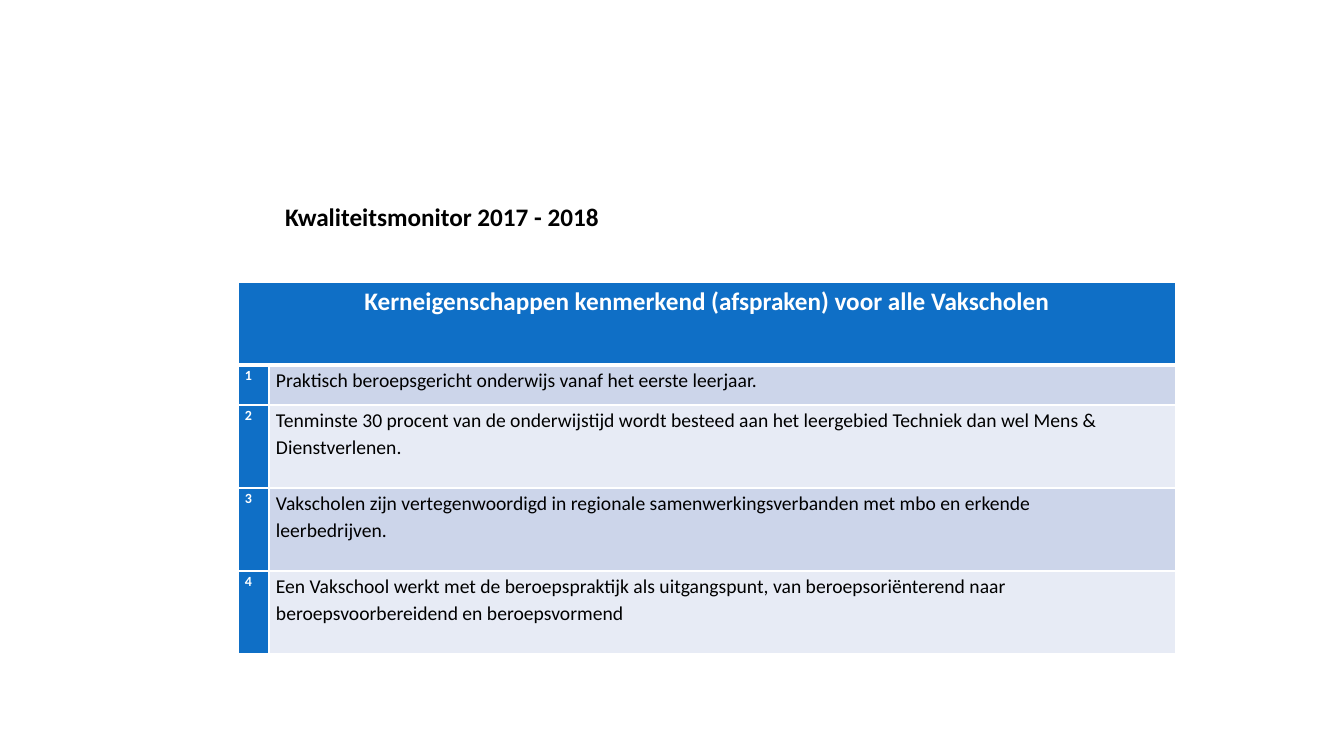
from lxml import etree
from pptx import Presentation
from pptx.dml.color import RGBColor
from pptx.enum.text import MSO_ANCHOR, PP_ALIGN
from pptx.oxml.ns import qn
from pptx.util import Pt

LEFT, CENTER = PP_ALIGN.LEFT, PP_ALIGN.CENTER
TOP, MIDDLE = MSO_ANCHOR.TOP, MSO_ANCHOR.MIDDLE

PX = 914400 / 100.8  # EMU in one px
WHITE = RGBColor(0xFF, 0xFF, 0xFF)
BLACK = RGBColor(0x00, 0x00, 0x00)
BLUE = RGBColor(0x0F, 0x6F, 0xC6)
BANDS = (RGBColor(0xCC, 0xD5, 0xEA), RGBColor(0xE7, 0xEB, 0xF5))

TITLE_FONT = {"name": "Calibri", "size": Pt(18), "bold": True}
NUMBER_FONT = {"name": "Calibri", "size": Pt(10), "bold": True}
TEXT_FONT = {"name": "Calibri", "size": Pt(14), "bold": False}

TITLE = "Kwaliteitsmonitor 2017 - 2018"
HEADING = "Kerneigenschappen kenmerkend (afspraken) voor alle Vakscholen"
PROPERTIES = [
    "Praktisch beroepsgericht onderwijs vanaf het eerste leerjaar.",
    "Tenminste 30 procent van de onderwijstijd wordt besteed aan het "
    "leergebied Techniek dan wel Mens & Dienstverlenen.",
    "Vakscholen zijn vertegenwoordigd in regionale samenwerkingsverbanden "
    "met mbo en erkende\nleerbedrijven.",
    "Een Vakschool werkt met de beroepspraktijk als uitgangspunt, van "
    "beroepsoriënterend naar\nberoepsvoorbereidend en beroepsvormend",
]
COLUMN_WIDTHS = (31, 907)
ROW_HEIGHTS = (83, 40, 83, 83, 83)


def px(*lengths):
    return [round(length * PX) for length in lengths]


def write(frame, text, font, color, align=LEFT, spacing=1.0):
    frame.text = text
    for paragraph in frame.paragraphs:
        paragraph.alignment = align
        paragraph.line_spacing = spacing
        for run in paragraph.runs:
            for attribute, value in font.items():
                setattr(run.font, attribute, value)
            run.font.color.rgb = color


def set_borders(cell, bottom_width):
    properties = cell._tc.get_or_add_tcPr()
    widths = {"a:lnL": 1, "a:lnR": 1, "a:lnT": 1, "a:lnB": bottom_width}
    for position, (side, width) in enumerate(widths.items()):
        line = etree.Element(qn(side), w=str(Pt(width)))
        fill = etree.SubElement(line, qn("a:solidFill"))
        etree.SubElement(fill, qn("a:srgbClr"), val=str(WHITE))
        properties.insert(position, line)


def fill_cell(cell, text, font, color, background, align=LEFT, bottom_width=1):
    cell.margin_left, cell.margin_right = px(7, 7)
    cell.margin_top = cell.margin_bottom = 0
    cell.vertical_anchor = TOP
    cell.fill.solid()
    cell.fill.fore_color.rgb = background
    set_borders(cell, bottom_width)
    write(cell.text_frame, text, font, color, align, 1.15)


def add_title(slide):
    title = slide.shapes.title
    title.left, title.top, title.width, title.height = px(275, 196, 337, 40)
    frame = title.text_frame
    frame.word_wrap = False
    frame.vertical_anchor = MIDDLE
    write(frame, TITLE, TITLE_FONT, BLACK)


def add_properties_table(slide):
    table = slide.shapes.add_table(
        len(ROW_HEIGHTS), len(COLUMN_WIDTHS),
        *px(238, 282, sum(COLUMN_WIDTHS), sum(ROW_HEIGHTS))).table
    for column, width in zip(table.columns, px(*COLUMN_WIDTHS)):
        column.width = width
    for row, height in zip(table.rows, px(*ROW_HEIGHTS)):
        row.height = height

    # Heading across both columns
    heading = table.cell(0, 0)
    heading.merge(table.cell(0, 1))
    fill_cell(heading, HEADING, TITLE_FONT, WHITE, BLUE, CENTER, 3)

    # Numbered properties in alternating bands
    for number, text in enumerate(PROPERTIES, 1):
        band = BANDS[(number - 1) % 2]
        fill_cell(table.cell(number, 0), str(number), NUMBER_FONT, WHITE, BLUE)
        fill_cell(table.cell(number, 1), text, TEXT_FONT, BLACK, band)


def main():
    deck = Presentation()
    deck.slide_width, deck.slide_height = px(1344, 756)
    slide = deck.slides.add_slide(deck.slide_layouts[5])
    add_title(slide)
    add_properties_table(slide)
    deck.save("out.pptx")


if __name__ == "__main__":
    main()
